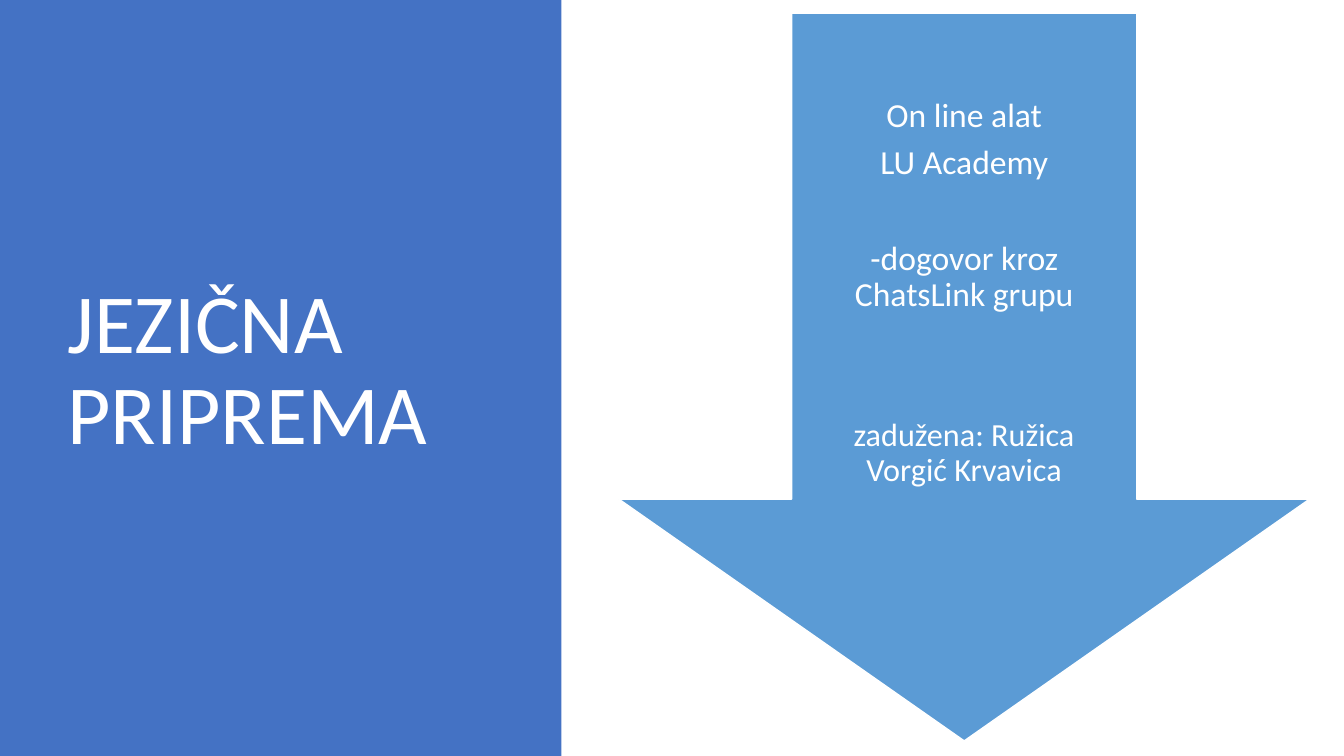
import dataclasses

import pptx
import pptx.dml.color
import pptx.enum.shapes
import pptx.enum.text
import pptx.util

Cm = pptx.util.Cm
Pt = pptx.util.Pt
SHAPES = pptx.enum.shapes.MSO_SHAPE
ALIGN = pptx.enum.text.PP_ALIGN


@dataclasses.dataclass(frozen=True)
class Theme:
    font: str = "Calibri"
    panel: str = "4472C4"
    arrow: str = "5B9BD5"
    light: str = "FFFFFF"
    title_size: int = 60
    body_size: int = 24
    contact_size: int = 23


THEME = Theme()


def rgb(value):
    return pptx.dml.color.RGBColor.from_string(value)


def add_filled(slide, preset, box, fill, outline=None):
    shape = slide.shapes.add_shape(preset, *map(Cm, box))
    shape.shadow.inherit = False
    shape.fill.solid()
    shape.fill.fore_color.rgb = rgb(fill)
    if outline:
        shape.line.color.rgb = rgb(outline)
        shape.line.width = Pt(1)
    else:
        shape.line.fill.background()
    return shape


def write(frame, text, size, align=ALIGN.LEFT, before=0, first=False):
    paragraph = frame.paragraphs[0] if first else frame.add_paragraph()
    paragraph.alignment = align
    paragraph.line_spacing = 0.9
    paragraph.space_before = Pt(before)
    run = paragraph.add_run()
    run.text = text
    run.font.name = THEME.font
    run.font.size = Pt(size)
    run.font.color.rgb = rgb(THEME.light)


def add_text_frame(slide, box, insets):
    frame = slide.shapes.add_textbox(*map(Cm, box)).text_frame
    frame.word_wrap = True
    frame.vertical_anchor = pptx.enum.text.MSO_ANCHOR.MIDDLE
    (frame.margin_left, frame.margin_top,
     frame.margin_right, frame.margin_bottom) = map(Cm, insets)
    return frame


def add_title_panel(slide, box):
    left, top, width, height = box
    add_filled(slide, SHAPES.RECTANGLE, box, THEME.panel)
    title_box = (left + 1.45, top + 1.73, width - 3.58, height - 3.76)
    title = add_text_frame(slide, title_box, (0.25, 0.13, 0.25, 0.13))
    write(title, "JEZIČNA PRIPREMA", THEME.title_size, first=True)


def add_preparation_arrow(slide, box):
    left, top, width, height = box
    shaft, head = 0.5, 0.35
    arrow = add_filled(slide, SHAPES.DOWN_ARROW, box, THEME.arrow, THEME.light)
    arrow.adjustments[0] = shaft
    arrow.adjustments[1] = head
    shaft_box = (left + width * (1 - shaft) / 2, top,
                 width * shaft, height - width * head * shaft)
    steps = add_text_frame(slide, shaft_box, (0.48, 0.48, 0.48, 1.65))
    entries = (
        ("On line alat", THEME.body_size, 0),
        ("LU Academy", THEME.body_size, 8),
        ("-dogovor kroz ChatsLink grupu", THEME.body_size, 42.5),
        ("zadužena: Ružica Vorgić Krvavica", THEME.contact_size, 75),
    )
    for index, (text, size, before) in enumerate(entries):
        write(steps, text, size, align=ALIGN.CENTER, before=before,
              first=index == 0)


def main():
    deck = pptx.Presentation()
    deck.slide_width, deck.slide_height = Cm(33.87), Cm(19.05)
    slide = deck.slides.add_slide(deck.slide_layouts[6])
    add_title_panel(slide, (0, 0, 14.15, 19.05))
    add_preparation_arrow(slide, (15.6, 0.33, 17.4, 18.34))
    deck.save("out.pptx")


if __name__ == "__main__":
    main()
